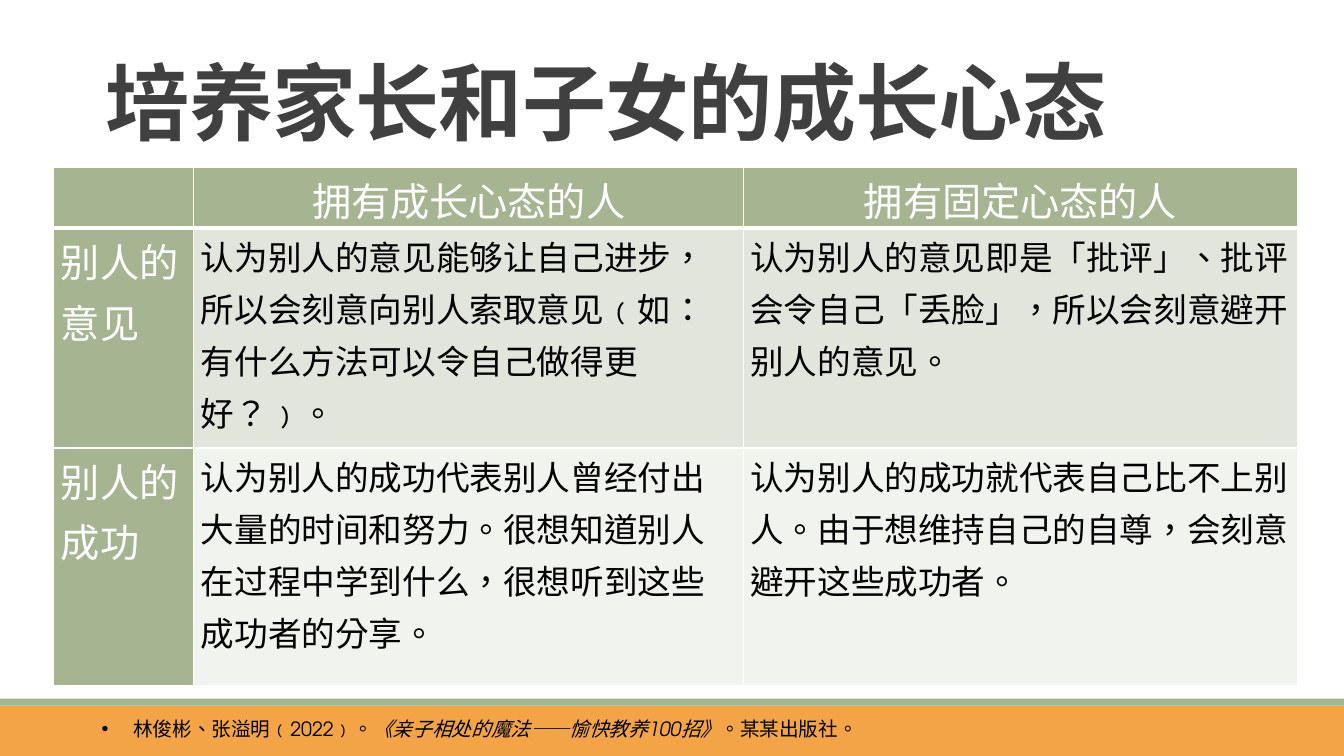
from dataclasses import dataclass

from lxml.etree import SubElement
from pptx import Presentation
from pptx.dml.color import RGBColor
from pptx.enum.lang import MSO_LANGUAGE_ID
from pptx.enum.shapes import MSO_SHAPE
from pptx.enum.text import MSO_ANCHOR, PP_ALIGN
from pptx.oxml import parse_xml
from pptx.oxml.ns import nsdecls, qn
from pptx.util import Pt

SANS = "Noto Sans CJK SC"
LATIN = "TeX Gyre Adventor"
WHITE, BLACK, GREEN = "FFFFFF", "000000", "A5B592"
WIDTH, HEIGHT = 960, 540


@dataclass
class Band:
    top: float
    height: float
    fill: str


@dataclass
class Row:
    height: float
    fill: str
    texts: tuple[str, str, str]


BANDS = [Band(504, 36, "F3A447"), Band(499, 5, GREEN)]
COLS = [100, 392.5, 396]
ROWS = [
    Row(31, GREEN, ("", "拥有成长心态的人", "拥有固定心态的人")),
    Row(157, "E1E5DC", (
        "别人的意见",
        "认为别人的意见能够让自己进步，所以会刻意向别人索取意见﹙如：有什么方法可以令自己做得更好？﹚。",
        "认为别人的意见即是「批评」、批评会令自己「丢脸」，所以会刻意避开别人的意见。")),
    Row(170, "F0F3EE", (
        "别人的成功",
        "认为别人的成功代表别人曾经付出大量的时间和努力。很想知道别人在过程中学到什么，很想听到这些成功者的分享。",
        "认为别人的成功就代表自己比不上别人。由于想维持自己的自尊，会刻意避开这些成功者。")),
]
SOURCE = [("林俊彬、张溢明﹙2022﹚。", False),
          ("《亲子相处的魔法——愉快教养100招》", True),
          ("。某某出版社。", False)]


def paint(target, color: str) -> None:
    """Give a fill a solid colour."""
    target.solid()
    target.fore_color.rgb = RGBColor.from_string(color)


def write(para, text: str, *, size: float, color: str, font: str = SANS,
          bold: bool = False, italic: bool = False, track: int = 0) -> None:
    run = para.add_run()
    run.text = text
    face = run.font
    face.size, face.bold, face.italic = Pt(size), bold, italic
    face.name = font
    face.language_id = MSO_LANGUAGE_ID.TRADITIONAL_CHINESE
    paint(face.fill, color)
    props = run._r.get_or_add_rPr()
    SubElement(props, qn("a:ea")).set("typeface", SANS)
    if track:
        props.set("spc", str(track))


def add_band(slide, band: Band) -> None:
    shape = slide.shapes.add_shape(
        MSO_SHAPE.RECTANGLE, 0, Pt(band.top), Pt(WIDTH), Pt(band.height))
    shape.shadow.inherit = False
    paint(shape.fill, band.fill)
    shape.line.fill.background()


def add_box(slide, left: float, top: float, width: float, height: float):
    frame = slide.shapes.add_textbox(
        Pt(left), Pt(top), Pt(width), Pt(height)).text_frame
    frame.word_wrap = True
    return frame


def set_edges(cell, top: float, bottom: float) -> None:
    """Draw white borders, one point wide at the sides."""
    props = cell._tc.get_or_add_tcPr()
    edges = {"L": 1, "R": 1, "T": top, "B": bottom}
    for spot, (side, width) in enumerate(edges.items()):
        props.insert(spot, parse_xml(
            f'<a:ln{side} {nsdecls("a")} w="{Pt(width)}"><a:solidFill>'
            f'<a:srgbClr val="{WHITE}"/></a:solidFill></a:ln{side}>'))


def fill_cell(cell, row: int, col: int) -> None:
    head = row == 0 or col == 0
    text = ROWS[row].texts[col]
    paint(cell.fill, GREEN if head else ROWS[row].fill)
    set_edges(cell, 3 if row == 1 else 1, 3 if row == 0 else 1)
    cell.margin_left = cell.margin_right = Pt(5)
    cell.margin_top = cell.margin_bottom = 0
    if not text:
        return
    para = cell.text_frame.paragraphs[0]
    para.alignment = PP_ALIGN.CENTER if row == 0 else PP_ALIGN.LEFT
    para.line_spacing = 1.07
    para.space_after = Pt(8)
    write(para, text, size=28 if head else 24,
          color=WHITE if head else BLACK)


def add_grid(slide) -> None:
    high = sum(row.height for row in ROWS)
    table = slide.shapes.add_table(
        len(ROWS), len(COLS), Pt(38.5), Pt(119.75), Pt(sum(COLS)), Pt(high)).table
    for col, width in enumerate(COLS):
        table.columns[col].width = Pt(width)
    for row, data in enumerate(ROWS):
        table.rows[row].height = Pt(data.height)
        for col in range(len(COLS)):
            fill_cell(table.cell(row, col), row, col)


def add_title(slide) -> None:
    frame = add_box(slide, 68.5, 7.5, 828, 104)
    frame.vertical_anchor = MSO_ANCHOR.BOTTOM
    para = frame.paragraphs[0]
    para.line_spacing = 0.85
    write(para, "培养家长和子女的成长心态", size=60, color="404040",
          bold=True, track=-50)


def add_source(slide) -> None:
    para = add_box(slide, 65.5, 508.5, 865, 41).paragraphs[0]
    props = para._p.get_or_add_pPr()
    props.set("marL", str(Pt(22.5)))
    props.set("indent", str(-Pt(22.5)))
    SubElement(props, qn("a:buFont")).set("typeface", "Arial")
    SubElement(props, qn("a:buChar")).set("char", "•")
    for text, italic in SOURCE:
        write(para, text, size=14, color=BLACK, font=LATIN, italic=italic)


def main() -> None:
    deck = Presentation()
    deck.slide_width, deck.slide_height = Pt(WIDTH), Pt(HEIGHT)
    slide = deck.slides.add_slide(deck.slide_layouts[6])
    for band in BANDS:
        add_band(slide, band)
    add_grid(slide)
    add_title(slide)
    add_source(slide)
    deck.save("out.pptx")


if __name__ == "__main__":
    main()
